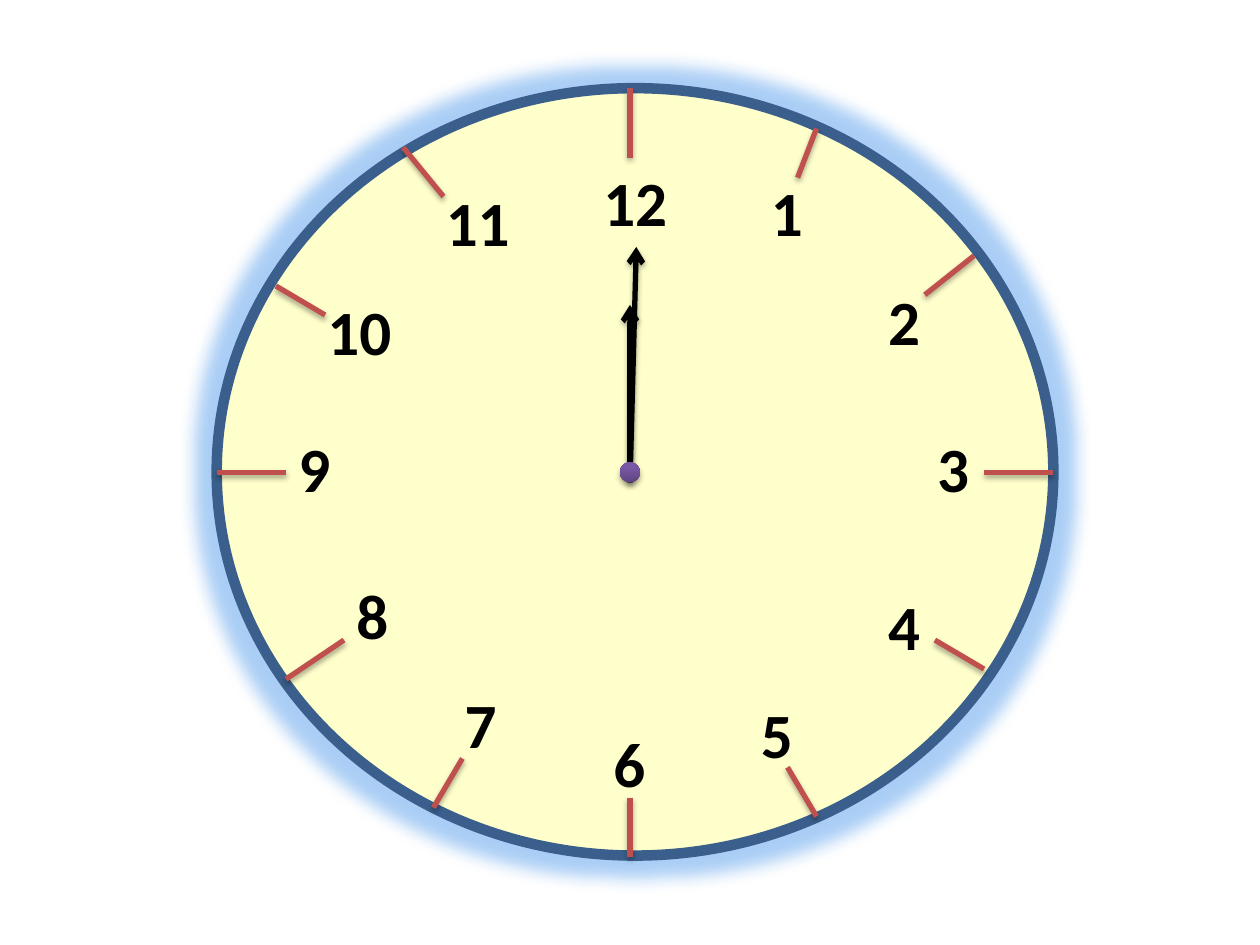
from lxml.etree import SubElement
from pptx import Presentation
from pptx.dml.color import RGBColor
from pptx.enum.shapes import MSO_CONNECTOR, MSO_SHAPE
from pptx.enum.text import MSO_AUTO_SIZE
from pptx.oxml.ns import qn
from pptx.util import Inches, Pt

FACE = (1.72, 0.7, 6.64, 6.09)
HUB = (4.92, 3.67, 0.16, 0.16)
TICKS = [
    (1.72, 3.75, 2.27, 3.75), (5, 0.7, 5, 1.25), (7.81, 3.75, 8.36, 3.75),
    (5, 6.33, 5, 6.8), (3.2, 1.17, 3.52, 1.56), (2.19, 2.27, 2.58, 2.5),
    (7.42, 5.08, 7.81, 5.31), (2.27, 5.39, 2.73, 5.08),
    (6.25, 6.09, 6.48, 6.48), (6.48, 1.02, 6.33, 1.41),
    (7.34, 2.34, 7.73, 2.03), (3.67, 6.02, 3.44, 6.41),
]
HOURS = [
    ("12", 4.69, 1.25), ("6", 4.77, 5.7), ("3", 7.34, 3.36),
    ("9", 2.27, 3.36), ("1", 6.02, 1.33), ("2", 6.95, 2.19),
    ("4", 6.95, 4.61), ("5", 5.94, 5.47), ("7", 3.59, 5.39),
    ("8", 2.73, 4.53), ("10", 2.5, 2.27), ("11", 3.44, 1.41),
]
WIDTHS = {1: 0.46, 2: 0.71}
HANDS = [(5, 3.75, 5, 2.42), (5, 3.83, 5.05, 1.96)]


def color(code):
    return RGBColor.from_string(code)


def effect(shape, kind, code, alpha, **attrs):
    props = shape.element.spPr
    group = props.find(qn("a:effectLst"))
    if group is None:
        group = SubElement(props, qn("a:effectLst"))
    item = SubElement(group, qn("a:" + kind),
                      {key: str(val) for key, val in attrs.items()})
    tint = SubElement(item, qn("a:srgbClr"), val=code)
    SubElement(tint, qn("a:alpha"), val=str(alpha * 1000))


def shade(shape):
    effect(shape, "outerShdw", "000000", 35, blurRad=Pt(3.1), dist=Pt(1.8),
           dir=90 * 60000, rotWithShape=0)


def oval(slide, box):
    shape = slide.shapes.add_shape(MSO_SHAPE.OVAL, *map(Inches, box))
    shape.shadow.inherit = False
    return shape


def stroke(slide, ends, code, arrow=False):
    line = slide.shapes.add_connector(MSO_CONNECTOR.STRAIGHT, *map(Inches, ends))
    line.line.color.rgb = color(code)
    line.line.width = Pt(3)
    if arrow:
        SubElement(line.line._get_or_add_ln(), qn("a:tailEnd"), type="arrow")
    shade(line)


def label(slide, text, left, top):
    box = slide.shapes.add_textbox(Inches(left), Inches(top),
                                   Inches(WIDTHS[len(text)]), Inches(0.71))
    frame = box.text_frame
    frame.text = text
    frame.word_wrap = False
    frame.auto_size = MSO_AUTO_SIZE.SHAPE_TO_FIT_TEXT
    font = frame.paragraphs[0].runs[0].font
    font.name, font.size, font.bold = "Calibri", Pt(36), True
    font.color.rgb = color("000000")


def main():
    deck = Presentation()
    deck.slide_width, deck.slide_height = Inches(10), Inches(7.5)
    slide = deck.slides.add_slide(deck.slide_layouts[6])

    face = oval(slide, FACE)
    face.fill.solid()
    face.fill.fore_color.rgb = color("FFFFCC")
    face.line.color.rgb = color("3A5F8C")
    face.line.width = Pt(6)
    effect(face, "glow", "2A84E8", 40, rad=Pt(18))

    for ends in TICKS:
        stroke(slide, ends, "C0504D")
    for hour in HOURS:
        label(slide, *hour)
    for ends in HANDS:
        stroke(slide, ends, "000000", arrow=True)

    hub = oval(slide, HUB)
    hub.line.fill.background()
    hub.fill.gradient()
    hub.fill.gradient_angle = 90
    stops = [(0, "5F4480"), (0.8, "7B58A6")]
    for stop, (place, code) in zip(hub.fill.gradient_stops, stops):
        stop.position = place
        stop.color.rgb = color(code)
    shade(hub)

    deck.save("out.pptx")


if __name__ == "__main__":
    main()
